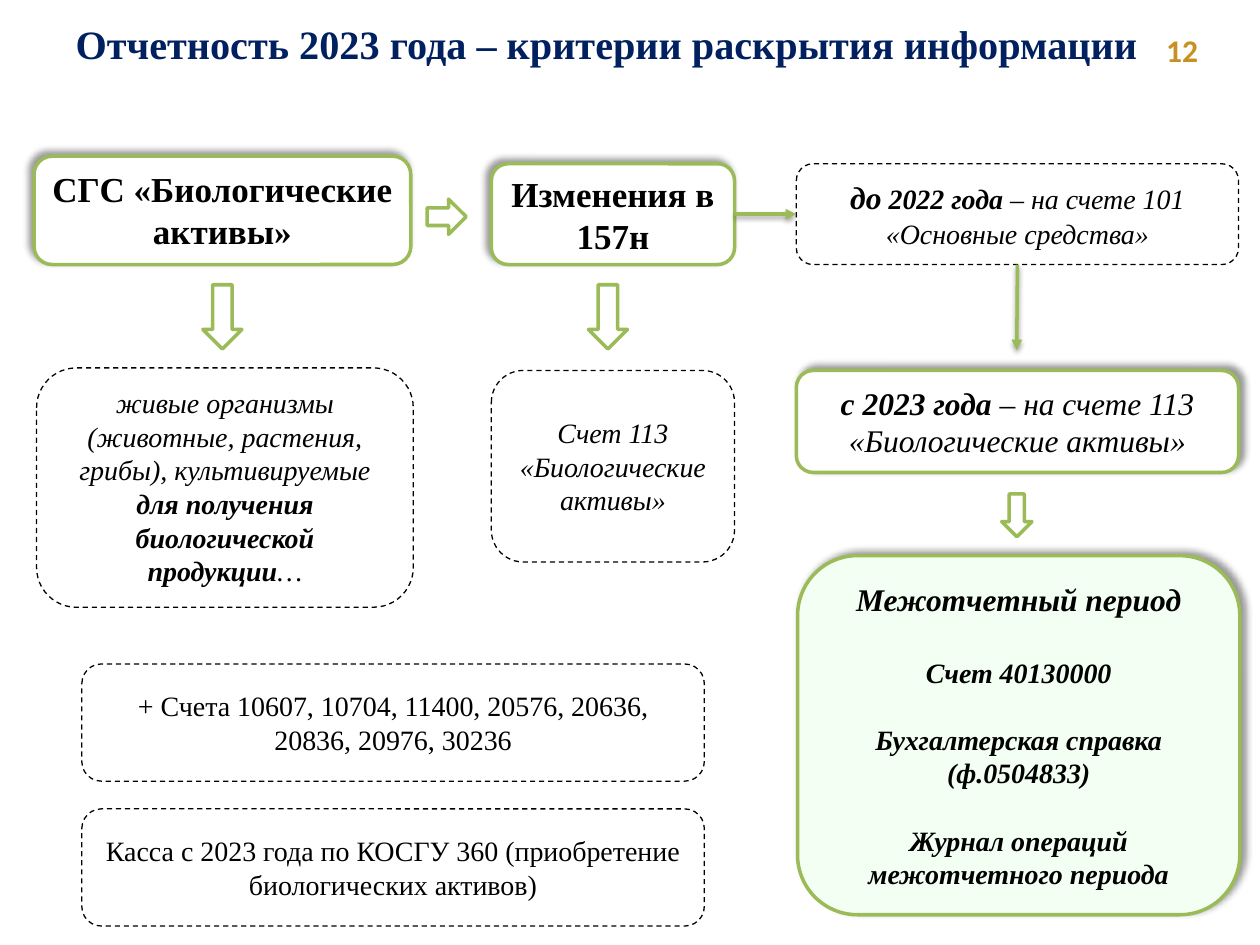
from dataclasses import dataclass
from typing import Optional

from lxml import etree
from pptx import Presentation
from pptx.dml.color import RGBColor
from pptx.enum.dml import MSO_LINE
from pptx.enum.shapes import MSO_CONNECTOR, MSO_SHAPE
from pptx.enum.text import MSO_ANCHOR, PP_ALIGN
from pptx.oxml.ns import qn
from pptx.util import Inches, Pt

ROUND = MSO_SHAPE.ROUNDED_RECTANGLE
DOWN = MSO_SHAPE.DOWN_ARROW
RIGHT = MSO_SHAPE.RIGHT_ARROW
STRAIGHT = MSO_CONNECTOR.STRAIGHT
DASH = MSO_LINE.DASH
TOP, MIDDLE = MSO_ANCHOR.TOP, MSO_ANCHOR.MIDDLE
LEFT, CENTER = PP_ALIGN.LEFT, PP_ALIGN.CENTER
GREEN, BLACK, WHITE, MINT = "9BBB59", "000000", "FFFFFF", "F3FFF3"
NAVY, GOLD = "002060", "C79023"
SERIF, SANS = "Times New Roman", "Calibri"


@dataclass
class Run:
    text: str
    size: float = 16
    bold: bool = False
    italic: bool = False
    color: str = BLACK
    font: str = SERIF


@dataclass
class Para:
    runs: list[Run]
    gap: float = 0
    align: PP_ALIGN = CENTER


@dataclass
class Box:
    area: tuple[float, float, float, float]
    paras: list[Para]
    fill: Optional[str] = None
    angle: Optional[int] = None
    anchor: MSO_ANCHOR = MIDDLE


def rgb(code: str) -> RGBColor:
    return RGBColor.from_string(code)


def assign(target, values: dict) -> None:
    for key, value in values.items():
        setattr(target, key, value)


def write(frame, paras: list[Para], anchor: MSO_ANCHOR) -> None:
    assign(frame, {"word_wrap": True, "vertical_anchor": anchor})
    for spot, para in enumerate(paras):
        line = frame.add_paragraph() if spot else frame.paragraphs[0]
        assign(line, {"alignment": para.align, "space_before": Pt(para.gap)})
        for item in para.runs:
            run = line.add_run()
            run.text = item.text
            assign(run.font, {"name": item.font, "size": Pt(item.size),
                              "bold": item.bold, "italic": item.italic})
            run.font.color.rgb = rgb(item.color)


def shade(shape, alpha: int, blur: float, dist: float, angle: int) -> None:
    props = shape._element.spPr
    for old in props.findall(qn("a:effectLst")):
        props.remove(old)
    group = etree.SubElement(props, qn("a:effectLst"))
    shadow = etree.SubElement(
        group, qn("a:outerShdw"), blurRad=str(Pt(blur)), dist=str(Pt(dist)),
        dir=str(angle * 60000), rotWithShape="0")
    color = etree.SubElement(shadow, qn("a:srgbClr"), val=BLACK)
    etree.SubElement(color, qn("a:alpha"), val=str(alpha * 1000))


def add_shape(slide, kind: MSO_SHAPE, area: tuple, fill: Optional[str]):
    shape = slide.shapes.add_shape(kind, *map(Inches, area))
    shape.shadow.inherit = False
    if fill:
        shape.fill.solid()
        shape.fill.fore_color.rgb = rgb(fill)
    else:
        shape.fill.background()
    shape.line.color.rgb = rgb(GREEN if fill else BLACK)
    shape.line.width = Pt(2 if fill else 0.75)
    if not fill:
        shape.line.dash_style = DASH
    return shape


def add_box(slide, box: Box):
    shape = add_shape(slide, ROUND, box.area, box.fill)
    write(shape.text_frame, box.paras, box.anchor)
    if box.angle is not None:
        shade(shape, 40, 4, 3, box.angle)
    return shape


def add_label(slide, area: tuple, para: Para) -> None:
    label = slide.shapes.add_textbox(*map(Inches, area))
    write(label.text_frame, [para], TOP)


def add_link(slide, start: tuple, end: tuple):
    link = slide.shapes.add_connector(STRAIGHT, *map(Inches, start + end))
    link.line.color.rgb = rgb(GREEN)
    link.line.width = Pt(2)
    etree.SubElement(link.line._get_or_add_ln(), qn("a:tailEnd"), type="triangle")
    shade(link, 38, 3.1, 1.6, 90)
    return link


CHANGES = Box((3.9, 1.3, 1.93, 0.8),
              [Para([Run("Изменения в 157н", 20, True)])], WHITE, 225)
BEFORE = Box((6.32, 1.3, 3.51, 0.8), [Para([
    Run("до", 18, True, True), Run(" 2022 года ", 16, True, True),
    Run("– на счете 101 «Основные средства»", italic=True)])])
BOXES = [
    Box((0.27, 1.24, 2.99, 0.86),
        [Para([Run("СГС «Биологические активы»", 20, True)])], WHITE, 225, TOP),
    Box((0.29, 2.92, 2.99, 1.9), [Para([
        Run("живые организмы (животные, растения, грибы), культивируемые ", italic=True),
        Run("для получения биологической продукции", bold=True, italic=True),
        Run("…", italic=True)])], anchor=TOP),
    Box((3.9, 2.94, 1.93, 1.52),
        [Para([Run("Счет 113 «Биологические активы»", italic=True)])]),
    Box((6.32, 2.94, 3.51, 0.81), [Para([
        Run("с 2023 года ", 18, True, True),
        Run("– на счете 113 «Биологические активы»", 18, italic=True)])], WHITE, 315),
    Box((6.33, 4.41, 3.51, 2.85), [
        Para([Run("Межотчетный период", 18, True, True)]),
        Para([Run("Счет 40130000", 16, True, True)], 21.3),
        Para([Run("Бухгалтерская справка (ф.0504833)", 16, True, True)], 19.2),
        Para([Run("Журнал операций межотчетного периода", 16, True, True)], 19.2),
    ], MINT, 315),
    Box((0.65, 5.27, 4.94, 0.93),
        [Para([Run("+ Счета 10607, 10704, 11400, 20576, 20636, 20836, 20976, 30236")])]),
    Box((0.65, 6.42, 4.94, 0.93),
        [Para([Run("Касса с 2023 года по КОСГУ 360 (приобретение биологических активов)")])]),
]
ARROWS = [
    (DOWN, (1.61, 2.26, 0.31, 0.51)),
    (RIGHT, (3.39, 1.58, 0.31, 0.28)),
    (DOWN, (4.67, 2.26, 0.31, 0.51)),
    (DOWN, (7.95, 3.92, 0.24, 0.34)),
]


def main() -> None:
    deck = Presentation()
    deck.slide_width, deck.slide_height = Inches(10), Inches(7.5)
    slide = deck.slides.add_slide(deck.slide_layouts[6])
    add_label(slide, (9.1, 0.2, 0.72, 0.4),
              Para([Run(" 12", 18, True, color=GOLD, font=SANS)], align=LEFT))
    add_label(slide, (0.47, 0.1, 8.7, 0.49), Para([
        Run("Отчетность 2023 года – критерии раскрытия информации", 23, True, color=NAVY)]))
    for box in BOXES:
        add_box(slide, box)
    changes, before = add_box(slide, CHANGES), add_box(slide, BEFORE)
    for kind, area in ARROWS:
        add_shape(slide, kind, area, WHITE)
    across = add_link(slide, (5.83, 1.7), (6.32, 1.7))
    across.begin_connect(changes, 3)
    across.end_connect(before, 1)
    down = add_link(slide, (8.07, 2.1), (8.07, 2.78))
    down.begin_connect(before, 2)
    deck.save("out.pptx")


if __name__ == "__main__":
    main()
